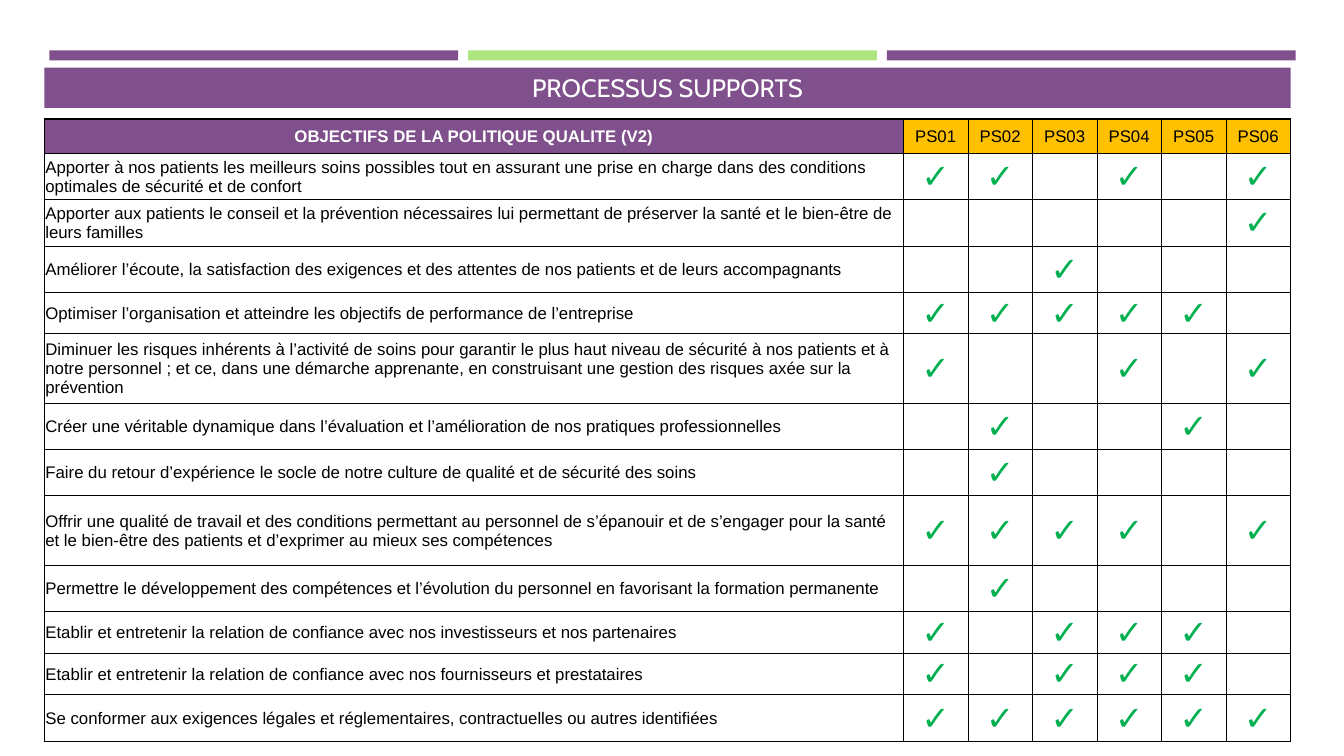
from dataclasses import dataclass

from lxml import etree
from pptx import Presentation
from pptx import util as u
from pptx.dml.color import RGBColor
from pptx.enum import shapes, text
from pptx.oxml.ns import qn


@dataclass(frozen=True)
class Theme:
    purple: str = "7F508B"
    green: str = "ADE67F"
    amber: str = "FFC000"
    check: str = "00B050"
    black: str = "000000"
    white: str = "FFFFFF"
    title_font: str = "Cabin"
    table_font: str = "Arial"
    title_size: int = 18
    table_size: int = 12
    check_size: int = 24
    thick: float = 1
    thin: float = 0.5


THEME = Theme()
CHECK = "✓"
HEADINGS = ["OBJECTIFS DE LA POLITIQUE QUALITE (V2)"] + [f"PS{n:02}" for n in range(1, 7)]

# Objective, processes PS01 to PS06 that serve it (1 = checked), row height
OBJECTIVES = [
    ("Apporter à nos patients les meilleurs soins possibles tout en assurant une prise en charge "
     "dans des conditions optimales de sécurité et de confort", "110101", 0.46),
    ("Apporter aux patients le conseil et la prévention nécessaires lui permettant de préserver "
     "la santé et le bien-être de leurs familles", "000001", 0.46),
    ("Améliorer l’écoute, la satisfaction des exigences et des attentes de nos patients et de "
     "leurs accompagnants", "001000", 0.46),
    ("Optimiser l’organisation et atteindre les objectifs de performance de l’entreprise",
     "111110", 0.41),
    ("Diminuer les risques inhérents à l’activité de soins pour garantir le plus haut niveau de "
     "sécurité à nos patients et à notre personnel ; et ce, dans une démarche apprenante, en "
     "construisant une gestion des risques axée sur la prévention", "100101", 0.69),
    ("Créer une véritable dynamique dans l’évaluation et l’amélioration de nos pratiques "
     "professionnelles", "010010", 0.46),
    ("Faire du retour d’expérience le socle de notre culture de qualité et de sécurité des soins",
     "010000", 0.46),
    ("Offrir une qualité de travail et des conditions permettant au personnel de s’épanouir et "
     "de s’engager pour la santé et le bien-être des patients et d’exprimer au mieux ses "
     "compétences", "111101", 0.69),
    ("Permettre le développement des compétences et l’évolution du personnel en favorisant la "
     "formation permanente", "010000", 0.46),
    ("Etablir et entretenir la relation de confiance avec nos investisseurs et nos partenaires",
     "101110", 0.41),
    ("Etablir et entretenir la relation de confiance avec nos fournisseurs et prestataires",
     "101110", 0.41),
    ("Se conformer aux exigences légales et réglementaires, contractuelles ou autres identifiées",
     "111111", 0.47),
]


def set_all(target, values):
    for name, value in values.items():
        setattr(target, name, value)


def format_font(font, color, **values):
    set_all(font, values)
    font.color.rgb = RGBColor.from_string(color)


def paint(item, color):
    item.fill.solid()
    item.fill.fore_color.rgb = RGBColor.from_string(color)


def add_bars(page, left, top, width, height, gap=0.1):
    """Three equal bars side by side across the given box."""
    colors = (THEME.purple, THEME.green, THEME.purple)
    bar_width = (width - gap * (len(colors) - 1)) / len(colors)
    for index, color in enumerate(colors):
        bar = page.shapes.add_shape(
            shapes.MSO_SHAPE.RECTANGLE, u.Inches(left + index * (bar_width + gap)),
            u.Inches(top), u.Inches(bar_width), u.Inches(height))
        bar.shadow.inherit = False
        bar.line.fill.background()
        paint(bar, color)


def add_title(page, left, top, width, height):
    title = page.shapes.title
    set_all(title, {"left": u.Inches(left), "top": u.Inches(top),
                    "width": u.Inches(width), "height": u.Inches(height)})
    paint(title, THEME.purple)
    set_all(title.text_frame, {"text": "PROCESSUS SUPPORTS", "word_wrap": True,
                               "vertical_anchor": text.MSO_ANCHOR.MIDDLE})
    para = title.text_frame.paragraphs[0]
    para.alignment = text.PP_ALIGN.CENTER
    format_font(para.runs[0].font, THEME.white, name=THEME.title_font,
                size=u.Pt(THEME.title_size))


def border_weights(row, column, last_row, last_column):
    """Thick outer frame, objective column and process headings; thin elsewhere."""
    thick = {
        "lnL": column <= 1,
        "lnR": column in (0, last_column),
        "lnT": row == 0 or (row == 1 and column > 0),
        "lnB": row == last_row or (row == 0 and column > 0),
    }
    return {side: THEME.thick if wide else THEME.thin for side, wide in thick.items()}


def draw_borders(cell, weights):
    properties = cell._tc.get_or_add_tcPr()
    for side, weight in weights.items():
        line = etree.SubElement(properties, qn(f"a:{side}"), w=str(u.Pt(weight)))
        fill = etree.SubElement(line, qn("a:solidFill"))
        etree.SubElement(fill, qn("a:srgbClr"), val=THEME.black)


def fill_cell(cell, words, row, column):
    inset = u.Inches(0.01)
    set_all(cell, {"margin_left": inset, "margin_right": inset, "margin_top": inset,
                   "margin_bottom": 0, "vertical_anchor": text.MSO_ANCHOR.MIDDLE})
    if row == 0:
        paint(cell, THEME.amber if column else THEME.purple)
    else:
        cell.fill.background()
    para = cell.text_frame.paragraphs[0]
    centred = row == 0 or column > 0
    para.alignment = text.PP_ALIGN.CENTER if centred else text.PP_ALIGN.LEFT
    main_heading = row == column == 0
    checked = words == CHECK
    color = THEME.white if main_heading else THEME.check if checked else THEME.black
    size = THEME.check_size if checked else THEME.table_size
    target = para
    if words:
        target = para.add_run()
        target.text = words
    format_font(target.font, color, name=THEME.table_font, size=u.Pt(size), bold=main_heading)


def add_objectives_table(page, left, top, width, process_width=0.64, heading_height=0.34):
    rows = [HEADINGS] + [[goal] + [CHECK if mark == "1" else "" for mark in marks]
                         for goal, marks, _ in OBJECTIVES]
    heights = [heading_height] + [height for _, _, height in OBJECTIVES]
    processes = len(HEADINGS) - 1
    table = page.shapes.add_table(
        len(rows), len(HEADINGS), u.Inches(left), u.Inches(top),
        u.Inches(width), u.Inches(sum(heights))).table
    set_all(table, {"first_row": False, "horz_banding": False})
    widths = [width - processes * process_width] + [process_width] * processes
    for column, column_width in zip(table.columns, widths):
        column.width = u.Inches(column_width)
    for r, (words_in_row, height) in enumerate(zip(rows, heights)):
        table.rows[r].height = u.Inches(height)
        for c, words in enumerate(words_in_row):
            cell = table.cell(r, c)
            draw_borders(cell, border_weights(r, c, len(rows) - 1, processes))
            fill_cell(cell, words, r, c)


def main():
    deck = Presentation()
    set_all(deck, {"slide_width": u.Inches(13.33), "slide_height": u.Inches(7.5)})
    page = deck.slides.add_slide(deck.slide_layouts.get_by_name("Title Only"))
    left, width = 0.44, 12.36
    add_bars(page, left + 0.05, 0.5, width, 0.1)
    add_title(page, left, 0.67, width, 0.4)
    add_objectives_table(page, left, 1.18, width)
    deck.save("out.pptx")


if __name__ == "__main__":
    main()
